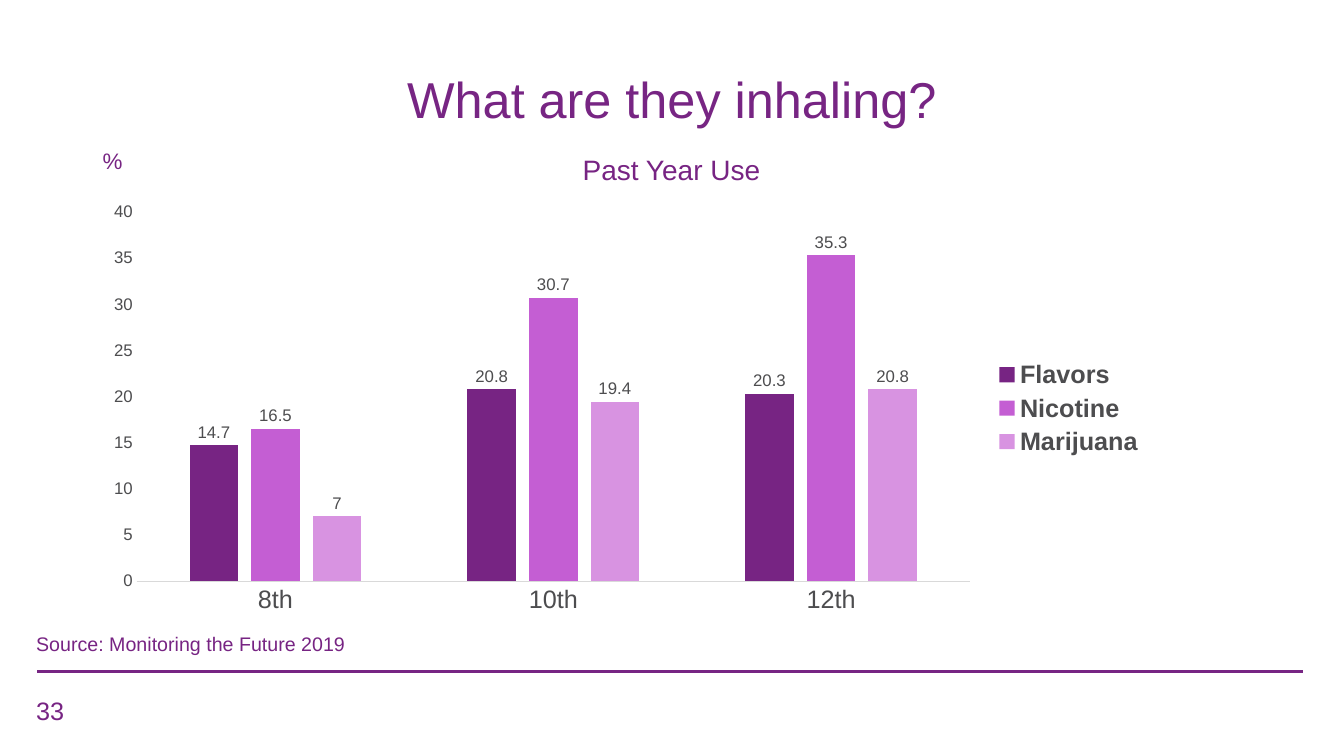
"""Build the slide showing what pupils inhale, by grade and substance."""
import pptx
import pptx.chart.data
import pptx.dml.color
import pptx.enum.chart
import pptx.enum.shapes
import pptx.enum.text
import pptx.oxml
import pptx.util

PX = 9144
FONT = "Arial"
RGBColor = pptx.dml.color.RGBColor
PURPLE = RGBColor(0x77, 0x24, 0x83)
TITLE_PURPLE = RGBColor(0x77, 0x25, 0x83)
ORCHID = RGBColor(0xC4, 0x5E, 0xD3)
LILAC = RGBColor(0xD8, 0x93, 0xE1)
GREY = RGBColor(0x4D, 0x4D, 0x4F)
PALE_GREY = RGBColor(0xD9, 0xD9, 0xD9)
LEFT = pptx.enum.text.PP_ALIGN.LEFT
CENTER = pptx.enum.text.PP_ALIGN.CENTER
TOP = pptx.enum.text.MSO_ANCHOR.TOP
BOTTOM = pptx.enum.text.MSO_ANCHOR.BOTTOM

GRADES = ("8th", "10th", "12th")
SUBSTANCES = (
    ("Flavors", (14.7, 20.8, 20.3), PURPLE),
    ("Nicotine", (16.5, 30.7, 35.3), ORCHID),
    ("Marijuana", (7, 19.4, 20.8), LILAC),
)


def to_emu(*lengths):
    """Turn px lengths into EMU."""
    return [pptx.util.Emu(length * PX) for length in lengths]


def style_font(font, size, color, bold=False):
    """Set the face, size, colour and weight of a font."""
    font.name = FONT
    font.size = pptx.util.Pt(size)
    font.bold = bold
    font.color.rgb = color


def add_text(slide, box, text, size, color=PURPLE, align=LEFT, anchor=TOP, spacing=1.0):
    """Add a one-paragraph text box."""
    frame = slide.shapes.add_textbox(*to_emu(*box)).text_frame
    frame.word_wrap = True
    frame.vertical_anchor = anchor
    paragraph = frame.paragraphs[0]
    paragraph.text = text
    paragraph.alignment = align
    paragraph.line_spacing = spacing
    style_font(paragraph.font, size, color)


def add_rule(slide, left, right, y):
    """Add the horizontal footer line."""
    rule = slide.shapes.add_connector(
        pptx.enum.shapes.MSO_CONNECTOR.STRAIGHT, *to_emu(left, y, right, y)
    )
    rule.line.color.rgb = TITLE_PURPLE
    rule.line.width = pptx.util.Pt(2.25)
    rule._element.spPr.append(pptx.oxml.parse_xml(
        '<a:effectLst xmlns:a="http://schemas.openxmlformats.org/drawingml/2006/main"/>'
    ))


def style_axes(chart):
    """Format the grade axis and the percentage axis."""
    no_tick = pptx.enum.chart.XL_TICK_MARK.NONE
    for axis, size in ((chart.category_axis, 18), (chart.value_axis, 12)):
        axis.major_tick_mark = no_tick
        axis.minor_tick_mark = no_tick
        axis.has_major_gridlines = False
        style_font(axis.tick_labels.font, size, GREY)
    grade_line = chart.category_axis.format.line
    grade_line.color.rgb = PALE_GREY
    grade_line.width = pptx.util.Pt(0.75)
    chart.value_axis.format.line.fill.background()
    chart.value_axis.minimum_scale = 0
    chart.value_axis.maximum_scale = 40
    chart.value_axis.major_unit = 5


def style_series(series, color):
    """Colour one series and label its columns."""
    series.invert_if_negative = False
    series.format.fill.solid()
    series.format.fill.fore_color.rgb = color
    labels = series.data_labels
    labels.show_value = True
    labels.position = pptx.enum.chart.XL_LABEL_POSITION.OUTSIDE_END
    style_font(labels.font, 12, GREY)


def add_use_chart(slide, box):
    """Add the clustered column chart of past year use."""
    data = pptx.chart.data.CategoryChartData()
    data.categories = GRADES
    for name, values, _ in SUBSTANCES:
        data.add_series(name, values)
    chart = slide.shapes.add_chart(
        pptx.enum.chart.XL_CHART_TYPE.COLUMN_CLUSTERED, *to_emu(*box), data
    ).chart
    chart.font.name = FONT
    chart.font.size = pptx.util.Pt(10)
    chart.has_title = False
    chart.has_legend = True
    chart.legend.position = pptx.enum.chart.XL_LEGEND_POSITION.RIGHT
    chart.legend.include_in_layout = False
    style_font(chart.legend.font, 18, GREY, bold=True)
    style_axes(chart)
    plot = chart.plots[0]
    plot.vary_by_categories = False
    plot.gap_width = 219
    plot.overlap = -27
    for series, (_, _, color) in zip(plot.series, SUBSTANCES):
        style_series(series, color)


def main():
    """Build and save the slide."""
    presentation = pptx.Presentation()
    presentation.slide_width, presentation.slide_height = to_emu(1333, 750)
    slide = presentation.slides.add_slide(presentation.slide_layouts[6])
    add_rule(slide, 37, 1292, 666)
    add_text(slide, (60, 0, 1213, 133), "What are they inhaling?", 36,
             TITLE_PURPLE, CENTER, BOTTOM, 0.9)
    add_text(slide, (26, 685, 300, 40), "33", 18)
    add_text(slide, (26, 622, 328, 34), "Source: Monitoring the Future 2019", 14)
    add_use_chart(slide, (92, 193, 1053, 424))
    add_text(slide, (92, 141, 35, 37), "%", 16)
    add_text(slide, (412, 146, 508, 44), "Past Year Use", 20, align=CENTER)
    presentation.save("out.pptx")


if __name__ == "__main__":
    main()
